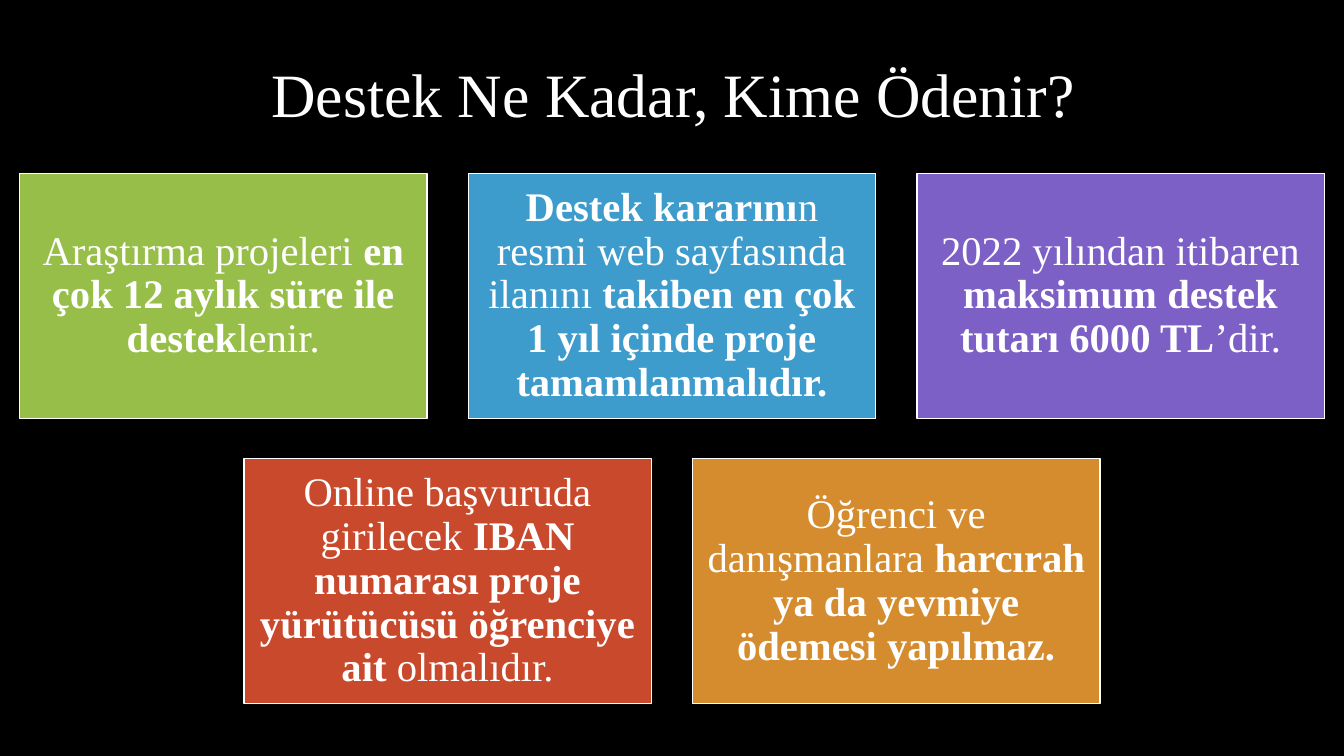
from dataclasses import dataclass

import pptx
import pptx.dml.color
import pptx.enum.shapes
import pptx.enum.text
import pptx.util

Inches = pptx.util.Inches


@dataclass(frozen=True)
class Theme:
    font: str = "Times New Roman"
    title_size: int = 44
    card_size: int = 29
    line_spacing: float = 0.9
    background: str = "000000"
    text: str = "FFFFFF"
    border: str = "FFFFFF"
    green: str = "97BE49"
    blue: str = "3D9CCC"
    purple: str = "7C60C6"
    red: str = "C9492C"
    orange: str = "D58C2E"


THEME = Theme()
SLIDE_WIDTH, SLIDE_HEIGHT = 13.33, 7.5
CARD_WIDTH, CARD_HEIGHT = 4.04, 2.43
COLUMN_GAP, ROW_GAP = 0.41, 0.4
CARDS_TOP = 1.72
CARD_INSET = 0.12

# Each card: fill colour, then text pieces as (wording, bold).
CARD_ROWS = [
    [
        (THEME.green, [("Araştırma projeleri ", False),
                       ("en çok 12 aylık süre ile destek", True),
                       ("lenir.", False)]),
        (THEME.blue, [("Destek kararını", True),
                      ("n resmi web sayfasında ilanını ", False),
                      ("takiben en çok 1 yıl içinde proje tamamlanmalıdır.", True)]),
        (THEME.purple, [("2022 yılından itibaren ", False),
                        ("maksimum destek tutarı 6000 TL", True),
                        ("’dir.", False)]),
    ],
    [
        (THEME.red, [("Online başvuruda girilecek ", False),
                     ("IBAN numarası proje yürütücüsü öğrenciye ait", True),
                     (" olmalıdır.", False)]),
        (THEME.orange, [("Öğrenci ve danışmanlara ", False),
                        ("harcırah ya da yevmiye ödemesi yapılmaz.", True)]),
    ],
]


def rgb(value):
    return pptx.dml.color.RGBColor.from_string(value)


class SlideBuilder:
    def __init__(self, slide, theme):
        self.slide = slide
        self.theme = theme

    def background(self):
        fill = self.slide.background.fill
        fill.solid()
        fill.fore_color.rgb = rgb(self.theme.background)

    def format_text(self, frame, size):
        """Centre the frame's text and give its runs the theme's type."""
        frame.word_wrap = True
        frame.auto_size = pptx.enum.text.MSO_AUTO_SIZE.NONE
        frame.vertical_anchor = pptx.enum.text.MSO_ANCHOR.MIDDLE
        for paragraph in frame.paragraphs:
            paragraph.alignment = pptx.enum.text.PP_ALIGN.CENTER
            paragraph.line_spacing = self.theme.line_spacing
            for run in paragraph.runs:
                run.font.name = self.theme.font
                run.font.size = pptx.util.Pt(size)
                run.font.color.rgb = rgb(self.theme.text)

    def title(self, wording, left, top, width, height):
        title = self.slide.shapes.title
        title.left, title.top = Inches(left), Inches(top)
        title.width, title.height = Inches(width), Inches(height)
        title.text_frame.text = wording
        self.format_text(title.text_frame, self.theme.title_size)

    def card(self, left, top, color, pieces):
        card = self.slide.shapes.add_shape(
            pptx.enum.shapes.MSO_SHAPE.RECTANGLE, Inches(left), Inches(top),
            Inches(CARD_WIDTH), Inches(CARD_HEIGHT))
        card.shadow.inherit = False
        card.fill.solid()
        card.fill.fore_color.rgb = rgb(color)
        card.line.color.rgb = rgb(self.theme.border)
        card.line.width = pptx.util.Pt(1)

        frame = card.text_frame
        frame.margin_left = frame.margin_right = Inches(CARD_INSET)
        frame.margin_top = frame.margin_bottom = Inches(CARD_INSET)
        for wording, bold in pieces:
            run = frame.paragraphs[0].add_run()
            run.text = wording
            run.font.bold = bold
        self.format_text(frame, self.theme.card_size)

    def card_row(self, top, cards):
        """Place one row of cards, centred across the slide."""
        pitch = CARD_WIDTH + COLUMN_GAP
        row_width = len(cards) * pitch - COLUMN_GAP
        row_left = (SLIDE_WIDTH - row_width) / 2
        for column, (color, pieces) in enumerate(cards):
            self.card(row_left + column * pitch, top, color, pieces)


def main():
    presentation = pptx.Presentation()
    presentation.slide_width = Inches(SLIDE_WIDTH)
    presentation.slide_height = Inches(SLIDE_HEIGHT)
    title_only = presentation.slide_layouts[5]
    builder = SlideBuilder(presentation.slides.add_slide(title_only), THEME)

    builder.background()
    builder.title("Destek Ne Kadar, Kime Ödenir?", 1.02, 0.28, 11.32, 1.38)
    for row, cards in enumerate(CARD_ROWS):
        builder.card_row(CARDS_TOP + row * (CARD_HEIGHT + ROW_GAP), cards)

    presentation.save("out.pptx")


if __name__ == "__main__":
    main()
